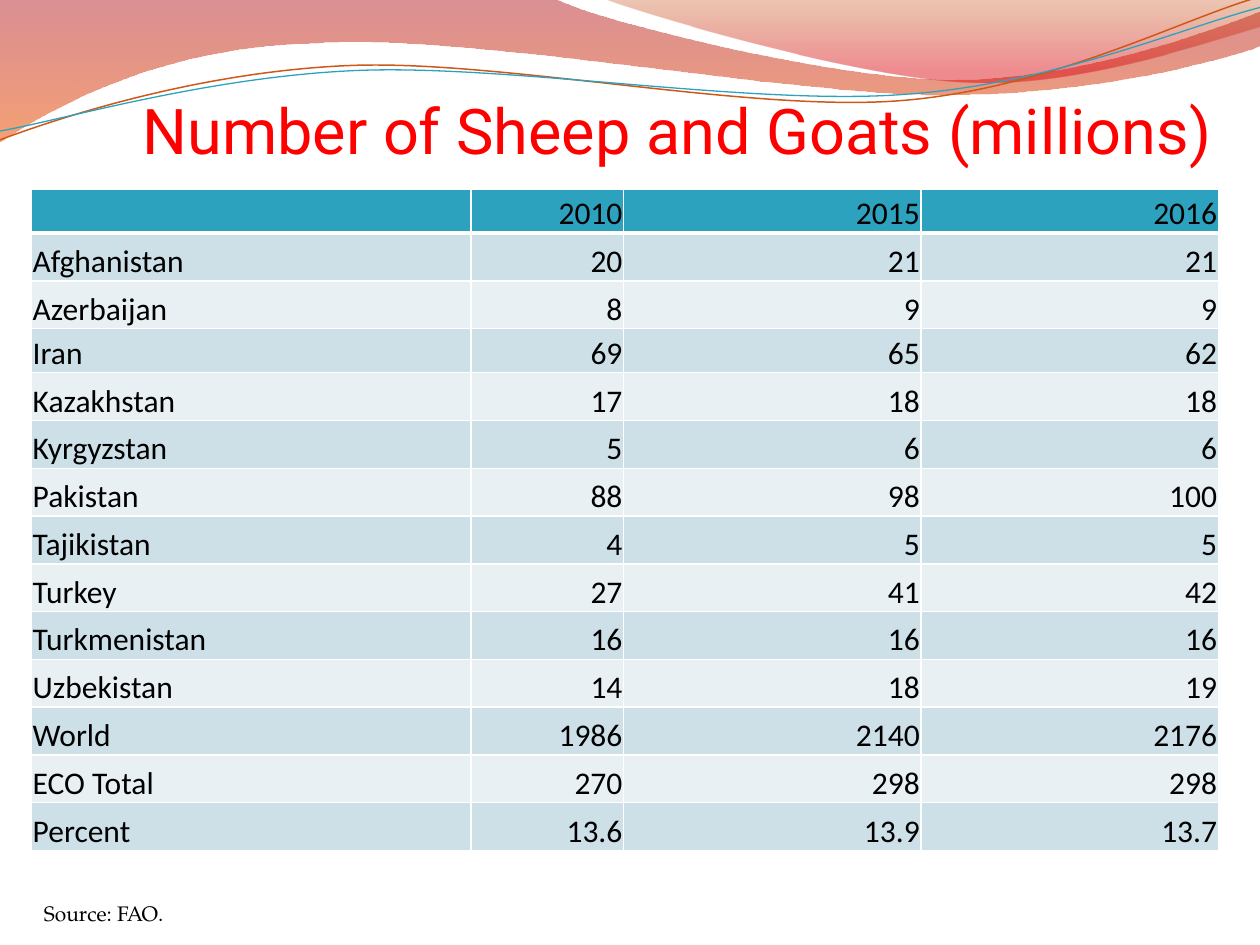
import math

import pptx
import pptx.dml.color
import pptx.enum.text
import pptx.oxml
import pptx.oxml.ns
import pptx.util
from lxml import etree

WIDTH, HEIGHT = 10, 7.5
STRAND_TILT = -2.7
ALIGN = pptx.enum.text.PP_ALIGN
ANCHOR = pptx.enum.text.MSO_ANCHOR
WHITE, BLACK, RED, TEAL, ORANGE = "FFFFFF", "000000", "FF0000", "2DA2BF", "CF5818"
BANDS = ["CDE0E8", "E8F0F4"]

COLUMN_WIDTHS = [3.49, 1.21, 2.36, 2.36]
TABLE_HEIGHT, SHORT_ROW_HEIGHT = 5.25, 0.35
SHORT_ROWS = ("", "Iran")
ROWS = [
    ("", "2010", "2015", "2016"),
    ("Afghanistan", "20", "21", "21"),
    ("Azerbaijan", "8", "9", "9"),
    ("Iran", "69", "65", "62"),
    ("Kazakhstan", "17", "18", "18"),
    ("Kyrgyzstan", "5", "6", "6"),
    ("Pakistan", "88", "98", "100"),
    ("Tajikistan", "4", "5", "5"),
    ("Turkey", "27", "41", "42"),
    ("Turkmenistan", "16", "16", "16"),
    ("Uzbekistan", "14", "18", "19"),
    ("World", "1986", "2140", "2176"),
    ("ECO Total", "270", "298", "298"),
    ("Percent", "13.6", "13.9", "13.7"),
]

# Wave outlines: one point is a straight step, three points are a Bezier curve
LEFT_WAVE = [
    [(0, 0)], [(4.4, -0.01)],
    [(4.76, 0.17), (6.64, 0.63), (7.58, 0.63)],
    [(8.53, 0.63), (9.58, 0.26), (10, 0.09)],
    [(10.01, 0.36)],
    [(9.83, 0.44), (8.7, 0.76), (7.46, 0.75)],
    [(6.22, 0.75), (3.82, 0.28), (2.57, 0.34)],
    [(1.29, 0.36), (0.46, 0.83), (-0.01, 1.13)],
    [(0, 0)],
]
RIGHT_WAVE = [
    [(4.79, -0.01)],
    [(5.09, 0.11), (6.82, 0.62), (7.69, 0.65)],
    [(8.56, 0.69), (9.61, 0.32), (10, 0.21)],
    [(10, 0)], [(4.79, -0.01)],
]
ORANGE_STRAND = [
    [(0, 1.11)],
    [(0.48, 0.93), (1.58, 0.57), (2.77, 0.52)],
    [(3.95, 0.47), (5.93, 0.89), (7.13, 0.8)],
    [(8.33, 0.71), (9.38, 0.15), (9.98, -0.02)],
]
TEAL_STRAND = [
    [(0, 1.04)],
    [(0.47, 0.96), (1.64, 0.61), (2.83, 0.56)],
    [(4.03, 0.51), (5.97, 0.84), (7.17, 0.75)],
    [(8.36, 0.67), (9.41, 0.21), (10, 0.06)],
]


def colour(code):
    return pptx.dml.color.RGBColor.from_string(code)


def inches(*lengths):
    return [pptx.util.Inches(length) for length in lengths]


def write_text(frame, text, *, font, size, code=BLACK, align=ALIGN.LEFT):
    para = frame.paragraphs[0]
    para.alignment = align
    span = para.add_run()
    span.text = text
    span.font.name = font
    span.font.size = pptx.util.Pt(size)
    span.font.bold = False
    span.font.color.rgb = colour(code)


def add_label(page, text, place, wrap=True, **style):
    box = page.shapes.add_textbox(*inches(*place))
    box.text_frame.word_wrap = wrap
    write_text(box.text_frame, text, **style)


# Waves
def add_outline(page, steps, close):
    first, *rest = [inches(*point) for step in steps for point in step]
    builder = page.shapes.build_freeform(*first, scale=1)
    builder.add_line_segments(rest, close=close)
    shape = builder.convert_to_shape()
    shape.shadow.inherit = False
    # Gather the three segments of each curve into one Bezier step
    segments = iter(list(shape.element.iter(pptx.oxml.ns.qn("a:lnTo"))))
    for step in steps[1:]:
        parts = [next(segments) for _ in step]
        if len(parts) == 3:
            curve = etree.Element(pptx.oxml.ns.qn("a:cubicBezTo"))
            parts[0].addprevious(curve)
            for part in parts:
                curve.append(part[0])
                part.getparent().remove(part)
    return shape


def add_wave(page, steps, stops):
    shape = add_outline(page, steps, close=True)
    shape.line.fill.background()
    marks = "".join(
        f'<a:gs pos="{place * 1000}"><a:srgbClr val="{code}">'
        f'<a:alpha val="{opacity * 1000}"/></a:srgbClr></a:gs>'
        for place, code, opacity in stops)
    gradient = pptx.oxml.parse_xml(
        f'<a:gradFill {pptx.oxml.ns.nsdecls("a")}><a:gsLst>{marks}</a:gsLst>'
        '<a:lin ang="5400000" scaled="0"/></a:gradFill>')
    shape.element.spPr.find(pptx.oxml.ns.qn("a:custGeom")).addnext(gradient)


def turn(point, centre, degrees):
    angle = math.radians(degrees)
    across, down = point[0] - centre[0], point[1] - centre[1]
    return (centre[0] + across * math.cos(angle) - down * math.sin(angle),
            centre[1] + across * math.sin(angle) + down * math.cos(angle))


def add_strand(page, steps, centre, code, width):
    level = [[turn(point, centre, -STRAND_TILT) for point in step] for step in steps]
    shape = add_outline(page, level, close=False)
    shape.rotation = STRAND_TILT
    shape.fill.background()
    shape.line.color.rgb = colour(code)
    shape.line.width = pptx.util.Pt(width)


# Table
def set_borders(cell, **widths):
    properties = cell._tc.get_or_add_tcPr()
    for place, side in enumerate("LRTB"):
        border = etree.Element(pptx.oxml.ns.qn(f"a:ln{side}"),
                               w=str(pptx.util.Pt(widths.get(side, 1))))
        fill = etree.SubElement(border, pptx.oxml.ns.qn("a:solidFill"))
        etree.SubElement(fill, pptx.oxml.ns.qn("a:srgbClr"), val=WHITE)
        properties.insert(place, border)


def fill_cell(cell, text, row, column):
    cell.fill.solid()
    cell.fill.fore_color.rgb = colour(BANDS[(row - 1) % 2] if row else TEAL)
    cell.margin_left, cell.margin_right, cell.margin_top, cell.margin_bottom = inches(
        0.01, 0.01, 0.01, 0)
    cell.vertical_anchor = ANCHOR.BOTTOM
    if text:
        write_text(cell.text_frame, text, font="Calibri", size=18,
                   align=ALIGN.RIGHT if column else ALIGN.LEFT)
    # A heavy rule parts the header from the body
    set_borders(cell, B=1 if row else 3, T=3 if row == 1 else 1)


def add_counts(page, left, top):
    short = len(SHORT_ROWS)
    row_height = (TABLE_HEIGHT - short * SHORT_ROW_HEIGHT) / (len(ROWS) - short)
    table = page.shapes.add_table(
        len(ROWS), len(COLUMN_WIDTHS),
        *inches(left, top, sum(COLUMN_WIDTHS), TABLE_HEIGHT)).table
    for column, width in zip(table.columns, COLUMN_WIDTHS):
        column.width = pptx.util.Inches(width)
    for row, texts in enumerate(ROWS):
        height = SHORT_ROW_HEIGHT if texts[0] in SHORT_ROWS else row_height
        table.rows[row].height = pptx.util.Inches(height)
        for column, text in enumerate(texts):
            fill_cell(table.cell(row, column), text, row, column)


def main():
    deck = pptx.Presentation()
    deck.slide_width, deck.slide_height = inches(WIDTH, HEIGHT)
    page = deck.slides.add_slide(deck.slide_layouts[6])

    # Header decoration
    add_wave(page, LEFT_WAVE, [(0, "AF0911", 45), (100, "EE5300", 55)])
    add_wave(page, RIGHT_WAVE, [(0, "C24400", 30), (80, "DC000B", 45)])
    add_strand(page, ORANGE_STRAND, (4.99, 0.58), ORANGE, 0.85)
    add_strand(page, TEAL_STRAND, (5, 0.59), TEAL, 0.75)

    # Title, source and figures
    add_label(page, "Number of Sheep and Goats (millions)",
              (0.075 * WIDTH, 0.09 * HEIGHT, 0.925 * WIDTH, HEIGHT / 6),
              font="Roboto", size=36, code=RED, align=ALIGN.CENTER)
    add_label(page, "Source: FAO.", (0.025 * WIDTH, 7.1, 1.18, 0.04 * HEIGHT),
              wrap=False, font="TeX Gyre Pagella", size=12)
    add_counts(page, 0.025 * WIDTH, 0.2 * HEIGHT)
    deck.save("out.pptx")


if __name__ == "__main__":
    main()
